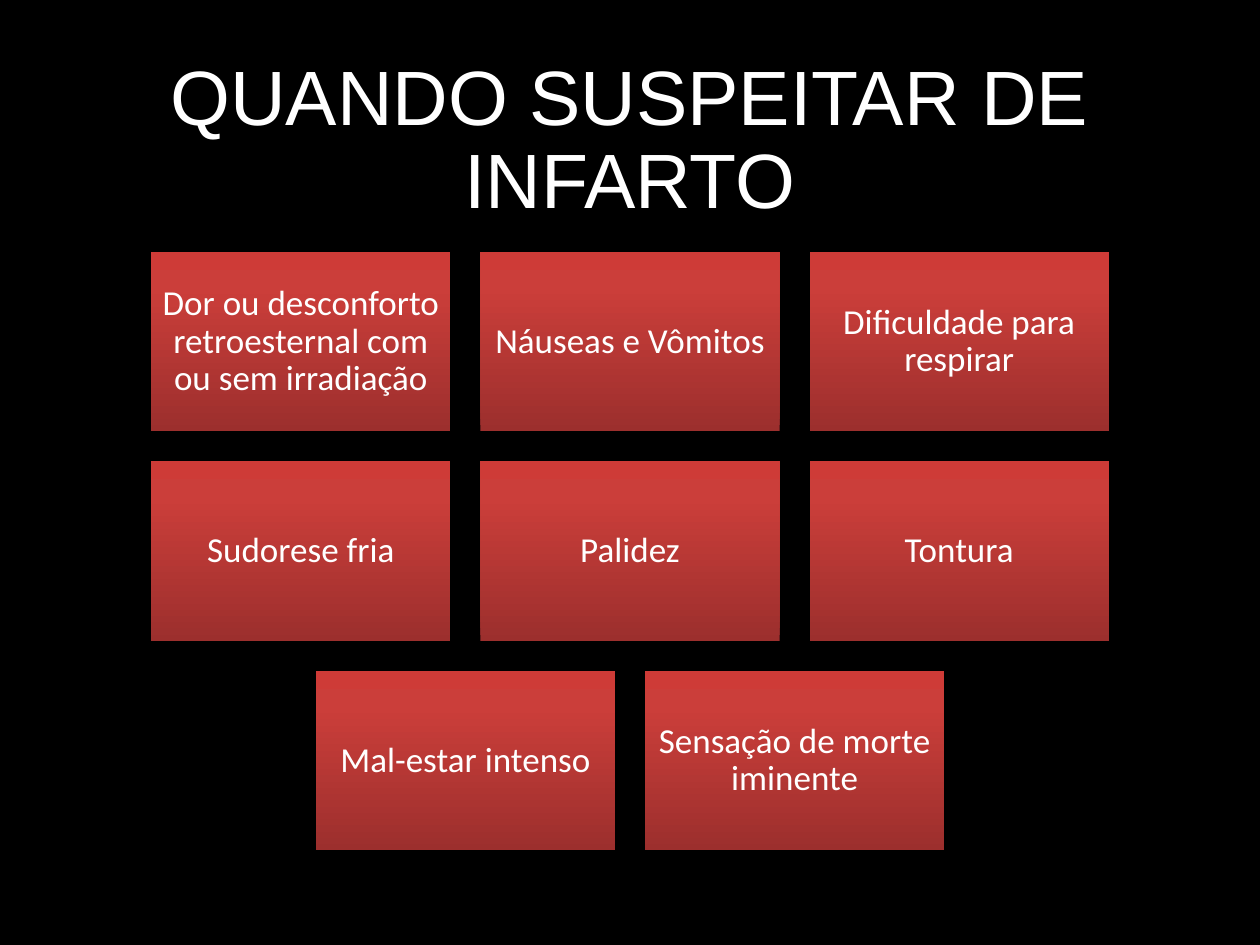
from copy import deepcopy

from pptx import Presentation
from pptx.dml.color import RGBColor
from pptx.enum.shapes import MSO_SHAPE as SHAPE
from pptx.enum.text import MSO_ANCHOR as ANCHOR, PP_ALIGN as ALIGN
from pptx.oxml.ns import qn
from pptx.util import Pt

WIDTH, HEIGHT = 720, 540
COLORS = {
    "background": "000000",
    "text": "FFFFFF",
    "red_dark": "9C2F2D",
    "red_mid": "CB3E3A",
    "red_light": "CE3B37",
}
RED_STOPS = [(0, "red_dark"), (0.8, "red_mid"), (1, "red_light")]

SYMPTOM_ROWS = [
    ["Dor ou desconforto retroesternal com ou sem irradiação",
     "Náuseas e Vômitos",
     "Dificuldade para respirar"],
    ["Sudorese fria", "Palidez", "Tontura"],
    ["Mal-estar intenso", "Sensação de morte iminente"],
]
CARD_W, CARD_H, GAP = 171, 102.6, 17.1
GRID_TOP = 144


def rgb(name):
    return RGBColor.from_string(COLORS[name])


def write(tf, text, *, font, size, color="text", inset=None, after=0):
    """Fill a text frame with one centred paragraph."""
    tf.word_wrap = True
    tf.vertical_anchor = ANCHOR.MIDDLE
    if inset is not None:
        tf.margin_left = tf.margin_right = Pt(inset)
        tf.margin_top = tf.margin_bottom = Pt(inset)
    p = tf.paragraphs[0]
    p.alignment = ALIGN.CENTER
    p.line_spacing = 0.9
    p.space_after = Pt(after)
    r = p.add_run()
    r.text = text
    r.font.name = font
    r.font.size = Pt(size)
    r.font.color.rgb = rgb(color)


class SlideBuilder:
    def __init__(self, prs):
        self.title_font, self.body_font = "Arial", "Calibri"
        self.s = prs.slides.add_slide(prs.slide_layouts[5])

    def background(self, color):
        fill = self.s.background.fill
        fill.solid()
        fill.fore_color.rgb = rgb(color)

    def title(self, text, x, y, w, h):
        sp = self.s.shapes.title
        sp.left, sp.top, sp.width, sp.height = map(Pt, (x, y, w, h))
        write(sp.text_frame, text, font=self.title_font, size=44)

    def gradient(self, sp, stops):
        """Fill a shape with colour stops that run from bottom to top."""
        sp.fill.gradient()
        sp.fill.gradient_angle = 90
        gs_list = sp._element.spPr.find(".//" + qn("a:gsLst"))
        while len(gs_list) < len(stops):
            gs_list.append(deepcopy(gs_list[-1]))
        for stop, (position, color) in zip(sp.fill.gradient_stops, stops):
            stop.position = position
            stop.color.rgb = rgb(color)

    def card(self, text, x, y, w, h):
        sp = self.s.shapes.add_shape(SHAPE.RECTANGLE, *map(Pt, (x, y, w, h)))
        sp.shadow.inherit = False
        sp.line.fill.background()
        self.gradient(sp, RED_STOPS)
        write(sp.text_frame, text, font=self.body_font, size=20,
              inset=6, after=7)

    def card_rows(self, rows, top):
        """Lay out rows of cards, each row centred on the slide."""
        for i, row in enumerate(rows):
            left = (WIDTH - len(row) * (CARD_W + GAP) + GAP) / 2
            y = top + i * (CARD_H + GAP)
            for j, text in enumerate(row):
                self.card(text, left + j * (CARD_W + GAP), y, CARD_W, CARD_H)


def main():
    prs = Presentation()
    prs.slide_width, prs.slide_height = Pt(WIDTH), Pt(HEIGHT)
    slide = SlideBuilder(prs)
    slide.background("background")
    slide.title("QUANDO SUSPEITAR DE INFARTO", 49.5, 28.75, 621, 104.4)
    slide.card_rows(SYMPTOM_ROWS, GRID_TOP)
    prs.save("out.pptx")


if __name__ == "__main__":
    main()
